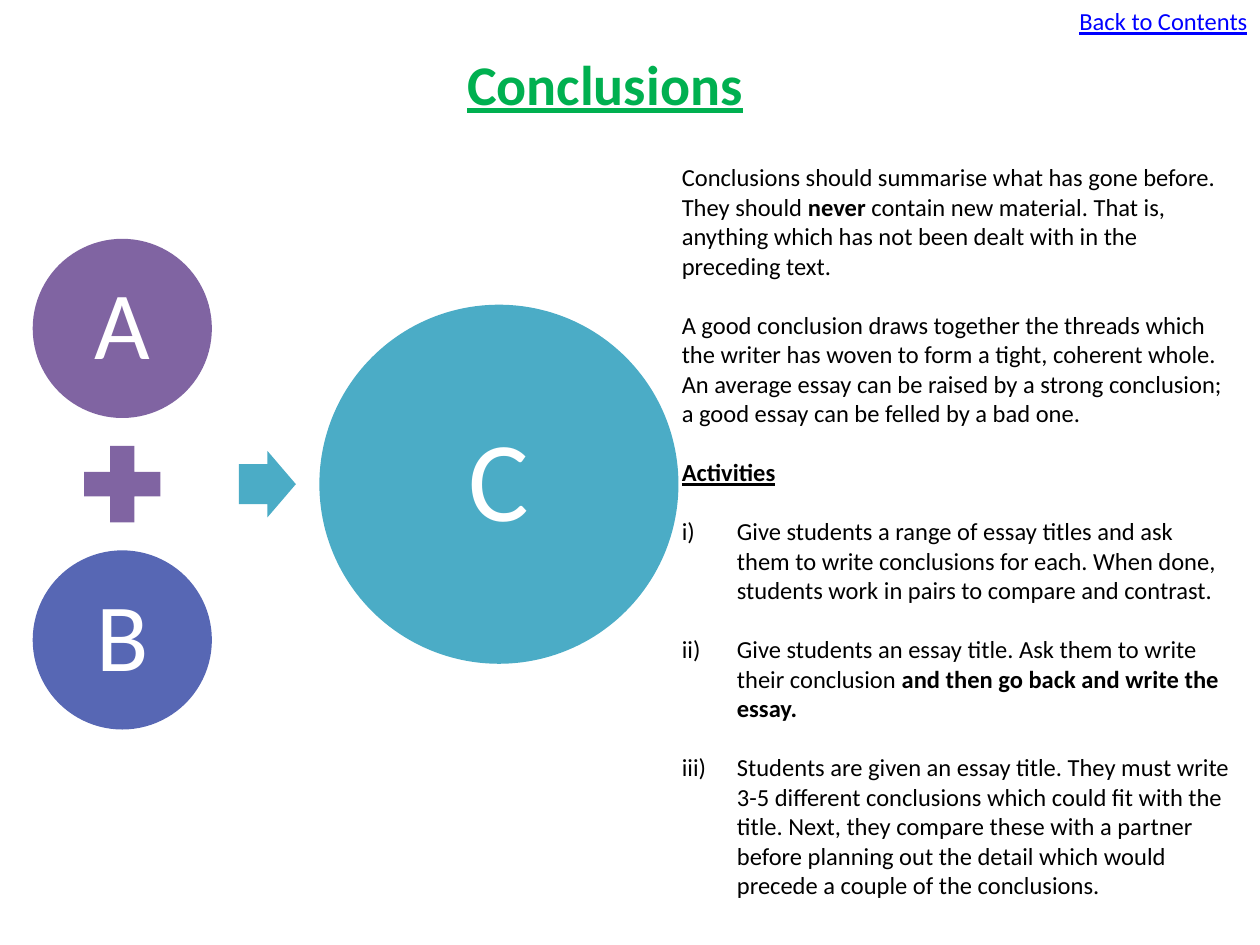
from lxml.etree import SubElement
from pptx import Presentation
from pptx.dml.color import RGBColor
from pptx.enum.shapes import MSO_SHAPE
from pptx.enum.text import MSO_ANCHOR, PP_ALIGN
from pptx.oxml.ns import qn
from pptx.util import Pt

FONT = "Calibri"
PURPLE, BLUE, TEAL = "8064A2", "5767B4", "4BACC6"
LINE_GAP = 17
INTRO = [
    [("Conclusions should summarise what has gone before. They should ", False),
     ("never", True),
     (" contain new material. That is, anything which has not been dealt with in the preceding text.", False)],
    [("A good conclusion draws together the threads which the writer has woven to form a tight, coherent whole.", False)],
    [("An average essay can be raised by a strong conclusion; a good essay can be felled by a bad one.", False)],
]
ACTIVITIES = [
    [("Give students a range of essay titles and ask them to write conclusions for each. "
      "When done, students work in pairs to compare and contrast.", False)],
    [("Give students an essay title. Ask them to write their conclusion ", False),
     ("and then go back and write the essay.", True)],
    [("Students are given an essay title. They must write 3-5 different conclusions which could fit with the title. "
      "Next, they compare these with a partner before planning out the detail which would precede "
      "a couple of the conclusions.", False)],
]


def rgb(color):
    """Turn a hex string into a colour."""
    return RGBColor.from_string(color)


def style(r, size, color="000000", bold=False, underline=False):
    """Format one run."""
    r.font.name, r.font.size = FONT, Pt(size)
    r.font.bold, r.font.underline = bold, underline
    r.font.color.rgb = rgb(color)


def text_box(s, x, y, w, h):
    """Add a wrapping text box and return its text frame."""
    tf = s.shapes.add_textbox(Pt(x), Pt(y), Pt(w), Pt(h)).text_frame
    tf.word_wrap = True
    return tf


def heading(s, x, y, w, h, text, size, color, align, bold=False):
    """Place one underlined line of text."""
    p = text_box(s, x, y, w, h).paragraphs[0]
    p.text, p.alignment = text, align
    style(p.runs[0], size, color, bold, underline=True)


def fill_paragraph(p, parts, gap):
    """Write the (text, bold) parts into a paragraph with a gap after it."""
    p.space_after = Pt(gap)
    for text, bold in parts:
        r = p.add_run()
        r.text = text
        style(r, 14, bold=bold)


def number(p, indent):
    """Give a paragraph a hanging roman number."""
    pPr = p._p.get_or_add_pPr()
    pPr.set("marL", str(Pt(indent)))
    pPr.set("indent", str(-Pt(indent)))
    SubElement(pPr, qn("a:buFont"), typeface="+mj-lt")
    SubElement(pPr, qn("a:buAutoNum"), type="romanLcParenR")


def advice(s, x, y, w, h):
    """Place the introduction and the numbered activities."""
    tf = text_box(s, x, y, w, h)
    p = tf.paragraphs[0]
    for parts, gap in zip(INTRO, (LINE_GAP, 0, LINE_GAP)):
        fill_paragraph(p, parts, gap)
        p = tf.add_paragraph()
    p.text, p.space_after = "Activities", Pt(LINE_GAP)
    style(p.runs[0], 14, bold=True, underline=True)
    for parts in ACTIVITIES:
        p = tf.add_paragraph()
        fill_paragraph(p, parts, 0 if parts is ACTIVITIES[-1] else LINE_GAP)
        number(p, 31.5)


def shape(s, kind, x, y, w, h, color):
    """Add a flat shape without outline."""
    sp = s.shapes.add_shape(kind, Pt(x), Pt(y), Pt(w), Pt(h))
    sp.shadow.inherit = False
    sp.fill.solid()
    sp.fill.fore_color.rgb = rgb(color)
    sp.line.fill.background()
    return sp


def circle(s, cx, cy, d, letter, size, color):
    """Add a lettered circle around a centre."""
    sp = shape(s, MSO_SHAPE.OVAL, cx - d / 2, cy - d / 2, d, d, color)
    tf = sp.text_frame
    tf.vertical_anchor = MSO_ANCHOR.MIDDLE
    tf.margin_left = tf.margin_right = tf.margin_top = tf.margin_bottom = Pt(6)
    p = tf.paragraphs[0]
    p.text, p.alignment, p.line_spacing = letter, PP_ALIGN.CENTER, 0.9
    style(p.runs[0], size, "FFFFFF")


def equation(s, x, y, w, h):
    """Draw A plus B leading to C."""
    small, big, plus = 102.4, h - 75.2, 59.4
    cx, cy = x + small / 2, y + h / 2
    circle(s, cx, y + small / 2, small, "A", 55, PURPLE)
    shape(s, MSO_SHAPE.MATH_PLUS, cx - plus / 2, cy - plus / 2, plus, plus, PURPLE)
    circle(s, cx, y + h - small / 2, small, "B", 55, BLUE)
    arrow = shape(s, MSO_SHAPE.RIGHT_ARROW, x + 117.8, cy - 19.05, 32.6, 38.1, TEAL)
    arrow.adjustments[0], arrow.adjustments[1] = 0.6, 0.5
    circle(s, x + w - big / 2, cy, big, "C", 65, TEAL)


def main():
    """Build and save the slide."""
    prs = Presentation()
    prs.slide_width, prs.slide_height = Pt(720), Pt(540)
    s = prs.slides.add_slide(prs.slide_layouts[6])
    heading(s, 604, 0, 116, 24.5, "Back to Contents", 14, "0000FF", PP_ALIGN.RIGHT)
    heading(s, 88, 24.5, 515.5, 46, "Conclusions", 32, "00B050", PP_ALIGN.CENTER, bold=True)
    advice(s, 382.5, 89.3, 327.5, 450.7)
    equation(s, 18.7, 136.5, 369, 280.4)
    prs.save("out.pptx")


if __name__ == "__main__":
    main()
